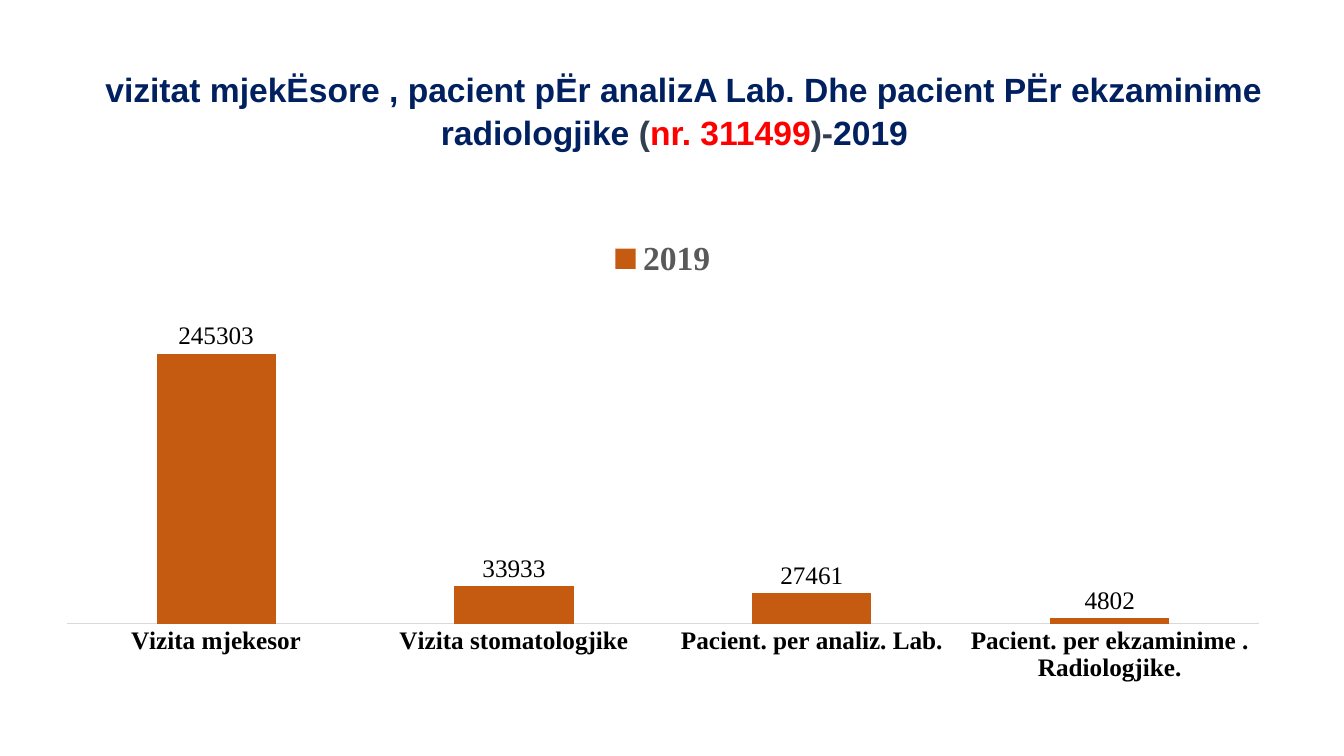
from pptx import Presentation
from pptx.chart.data import CategoryChartData
from pptx.dml.color import RGBColor
from pptx.enum.chart import XL_CHART_TYPE, XL_LABEL_POSITION, XL_LEGEND_POSITION, XL_TICK_MARK
from pptx.enum.text import MSO_ANCHOR, MSO_AUTO_SIZE, PP_ALIGN
from pptx.util import Inches, Pt

HUES = {"navy": "002060", "slate": "333F50", "red": "FF0000", "bar": "C55A11",
        "grey": "595959", "rule": "D9D9D9", "black": "000000"}


def hue(name):
    return RGBColor.from_string(HUES[name])


def style(font, face, size, color, bold):
    font.name, font.size, font.bold = face, Pt(size), bold
    font.color.rgb = hue(color)


deck = Presentation()
deck.slide_width, deck.slide_height = Inches(13.33), Inches(7.5)
slide = deck.slides.add_slide(deck.slide_layouts[5])

# Title
title = slide.shapes.title
title.left, title.top = Inches(0.74), Inches(0.63)
title.width, title.height = Inches(11.99), Inches(0.91)
frame = title.text_frame
frame.word_wrap = True
frame.auto_size = MSO_AUTO_SIZE.SHAPE_TO_FIT_TEXT
frame.vertical_anchor = MSO_ANCHOR.MIDDLE
para = frame.paragraphs[0]
para.alignment = PP_ALIGN.CENTER
para.line_spacing = 1.06
for text, color in [
    (" vizitat mjekËsore , pacient pËr analizA Lab. Dhe pacient PËr ekzaminime radiologjike ", "navy"),
    ("(", "slate"),
    ("nr. 311499", "red"),
    (")-", "slate"),
    ("2019 ", "navy"),
]:
    run = para.add_run()
    run.text = text
    style(run.font, "Arial", 24, color, True)

# Column chart
data = CategoryChartData()
data.categories = ["Vizita mjekesor", "Vizita stomatologjike",
                   "Pacient. per analiz. Lab.", "Pacient. per ekzaminime . Radiologjike."]
data.add_series("2019", [245303, 33933, 27461, 4802])
chart = slide.shapes.add_chart(XL_CHART_TYPE.COLUMN_CLUSTERED, Inches(0.42), Inches(2.24),
                               Inches(12.31), Inches(4.62), data).chart
style(chart.font, "Calibri", 10, "black", False)
chart.has_title = False

# Legend
chart.has_legend = True
chart.legend.position = XL_LEGEND_POSITION.TOP
chart.legend.include_in_layout = False
style(chart.legend.font, "Times New Roman", 24, "grey", True)

# Axes
base = chart.category_axis
base.major_tick_mark = XL_TICK_MARK.NONE
base.format.line.color.rgb = hue("rule")
base.format.line.width = Pt(0.75)
style(base.tick_labels.font, "Times New Roman", 18, "black", True)
scale = chart.value_axis
scale.visible = False
scale.has_major_gridlines = False
scale.minimum_scale, scale.maximum_scale = 0, 300000

# Bars and their values
plot = chart.plots[0]
plot.gap_width, plot.overlap = 150, -25
plot.vary_by_categories = False
bars = plot.series[0]
bars.format.fill.solid()
bars.format.fill.fore_color.rgb = hue("bar")
labels = bars.data_labels
labels.show_value = True
labels.position = XL_LABEL_POSITION.OUTSIDE_END
style(labels.font, "Times New Roman", 18, "black", False)

deck.save("out.pptx")
